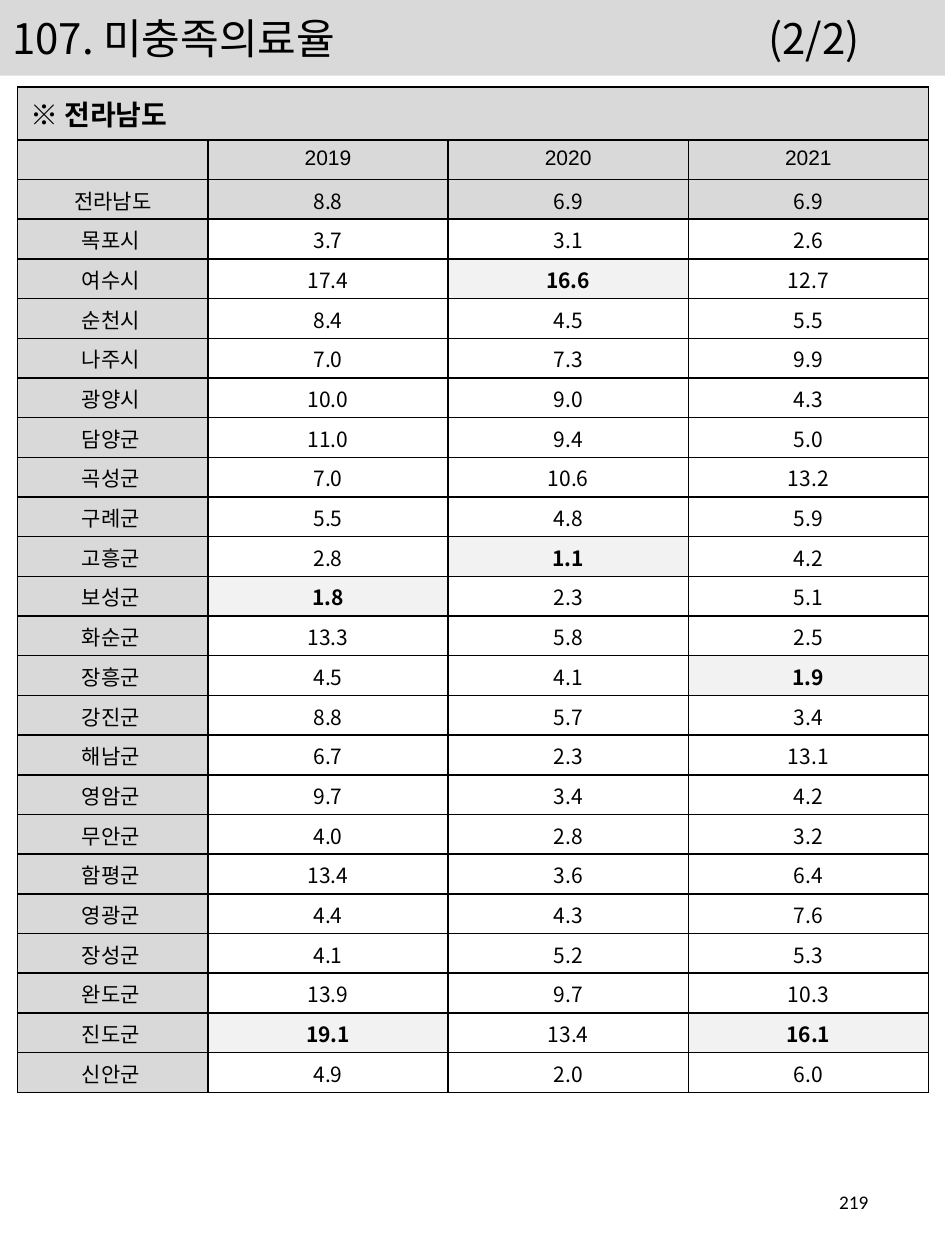
from lxml.etree import SubElement
from pptx import Presentation
from pptx.dml.color import RGBColor
from pptx.enum.shapes import MSO_SHAPE
from pptx.enum.text import MSO_ANCHOR, PP_ALIGN
from pptx.oxml.ns import qn
from pptx.util import Inches, Pt

# Content
TITLE, PART = "107. 미충족의료율", "(2/2)"
REGION = "※ 전라남도"
YEARS = ["2019", "2020", "2021"]
TOTAL = ("전라남도", 8.8, 6.9, 6.9)
DISTRICTS = [
    ("목포시", 3.7, 3.1, 2.6),
    ("여수시", 17.4, 16.6, 12.7),
    ("순천시", 8.4, 4.5, 5.5),
    ("나주시", 7.0, 7.3, 9.9),
    ("광양시", 10.0, 9.0, 4.3),
    ("담양군", 11.0, 9.4, 5.0),
    ("곡성군", 7.0, 10.6, 13.2),
    ("구례군", 5.5, 4.8, 5.9),
    ("고흥군", 2.8, 1.1, 4.2),
    ("보성군", 1.8, 2.3, 5.1),
    ("화순군", 13.3, 5.8, 2.5),
    ("장흥군", 4.5, 4.1, 1.9),
    ("강진군", 8.8, 5.7, 3.4),
    ("해남군", 6.7, 2.3, 13.1),
    ("영암군", 9.7, 3.4, 4.2),
    ("무안군", 4.0, 2.8, 3.2),
    ("함평군", 13.4, 3.6, 6.4),
    ("영광군", 4.4, 4.3, 7.6),
    ("장성군", 4.1, 5.2, 5.3),
    ("완도군", 13.9, 9.7, 10.3),
    ("진도군", 19.1, 13.4, 16.1),
    ("신안군", 4.9, 2.0, 6.0),
]
PAGE = "219"

THEME = {
    "ink": "000000", "head": "D9D9D9", "body": "FFFFFF", "extreme": "F2F2F2",
    "latin": "Arial", "korean": "Noto Sans CJK KR", "number": "Calibri",
    "title": 24, "region": 16, "cell": 12, "page": 11, "border": 1,
}

# Layout in inches
W, H = 7.5, 10
LEFT, TOP, TABLE_W, TABLE_H = 0.14, 0.69, 7.23, 7.98
NAME_W, REGION_H = 1.51, 0.42
YEAR_W = (TABLE_W - NAME_W) / len(YEARS)
ROW_H = (TABLE_H - REGION_H) / (2 + len(DISTRICTS))


def color(key):
    return RGBColor.from_string(THEME[key])


def write(p, text, font, size, bold=False, align=PP_ALIGN.LEFT):
    p.alignment = align
    r = p.add_run()
    r.text = text
    style = {"name": THEME[font], "size": Pt(THEME[size]), "bold": bold}
    for name, value in style.items():
        setattr(r.font, name, value)
    r.font.color.rgb = color("ink")
    SubElement(r.font._element, qn("a:ea"), typeface=THEME["korean"])


def paint(cell, fill, margins, anchor=MSO_ANCHOR.MIDDLE):
    for side, value in zip(("left", "top", "right", "bottom"), margins):
        setattr(cell, f"margin_{side}", Inches(value))
    cell.vertical_anchor = anchor
    tcPr = cell._tc.get_or_add_tcPr()
    for edge in ("lnL", "lnR", "lnT", "lnB"):
        ln = SubElement(tcPr, qn(f"a:{edge}"), w=str(Pt(THEME["border"])))
        solid = SubElement(ln, qn("a:solidFill"))
        SubElement(solid, qn("a:srgbClr"), val=THEME["ink"])
    cell.fill.solid()
    cell.fill.fore_color.rgb = color(fill)


prs = Presentation()
prs.slide_width, prs.slide_height = Inches(W), Inches(H)
s = prs.slides.add_slide(prs.slide_layouts[6])

# Title band, with the part number on a tab stop
sp = s.shapes.add_shape(MSO_SHAPE.RECTANGLE, 0, 0, Inches(W), Inches(0.6))
sp.shadow.inherit = False
sp.fill.solid()
sp.fill.fore_color.rgb = color("head")
sp.line.fill.background()
tf = sp.text_frame
tf.vertical_anchor = MSO_ANCHOR.MIDDLE
p = tf.paragraphs[0]
tabs = SubElement(p._p.get_or_add_pPr(), qn("a:tabLst"))
SubElement(tabs, qn("a:tab"), pos=str(Inches(6)), algn="l")
write(p, f"{TITLE}\t{PART}", "korean", "title")

# Page number
tf = s.shapes.add_textbox(Inches(5.3), Inches(9.27), Inches(1.69), Inches(0.53)).text_frame
tf.word_wrap = True
tf.vertical_anchor = MSO_ANCHOR.MIDDLE
write(tf.paragraphs[0], PAGE, "number", "page", align=PP_ALIGN.RIGHT)

# Table grid
table = s.shapes.add_table(3 + len(DISTRICTS), 1 + len(YEARS), Inches(LEFT), Inches(TOP),
                           Inches(TABLE_W), Inches(TABLE_H)).table
for i, col in enumerate(table.columns):
    col.width = Inches(YEAR_W if i else NAME_W)
for i, row in enumerate(table.rows):
    row.height = Inches(ROW_H if i else REGION_H)

# Region heading and years
WIDE, TIGHT = (0.1, 0.05, 0.1, 0.05), (0.01, 0.01, 0.01, 0)
for c in range(1 + len(YEARS)):
    paint(table.cell(0, c), "head", WIDE, MSO_ANCHOR.TOP)
    paint(table.cell(1, c), "head", WIDE if c else (0, 0, 0, 0), MSO_ANCHOR.TOP)
table.cell(0, 0).merge(table.cell(0, len(YEARS)))
write(table.cell(0, 0).text_frame.paragraphs[0], REGION, "latin", "region", bold=True)
for c, year in enumerate(YEARS, 1):
    write(table.cell(1, c).text_frame.paragraphs[0], year, "latin", "cell", align=PP_ALIGN.CENTER)

# Rates: the lowest and highest district of each year stand out
extremes = [(min(col), max(col)) for col in list(zip(*DISTRICTS))[1:]]
for r, (name, *rates) in enumerate([TOTAL, *DISTRICTS], 2):
    is_total = r == 2
    cell = table.cell(r, 0)
    paint(cell, "head", TIGHT if is_total else (0.51, *TIGHT[1:]))
    write(cell.text_frame.paragraphs[0], name, "latin", "cell",
          align=PP_ALIGN.CENTER if is_total else PP_ALIGN.LEFT)
    for c, rate in enumerate(rates, 1):
        marked = not is_total and rate in extremes[c - 1]
        cell = table.cell(r, c)
        paint(cell, "head" if is_total else "extreme" if marked else "body", TIGHT)
        write(cell.text_frame.paragraphs[0], f"{rate:.1f}", "korean", "cell", marked,
              PP_ALIGN.CENTER)

prs.save("out.pptx")
